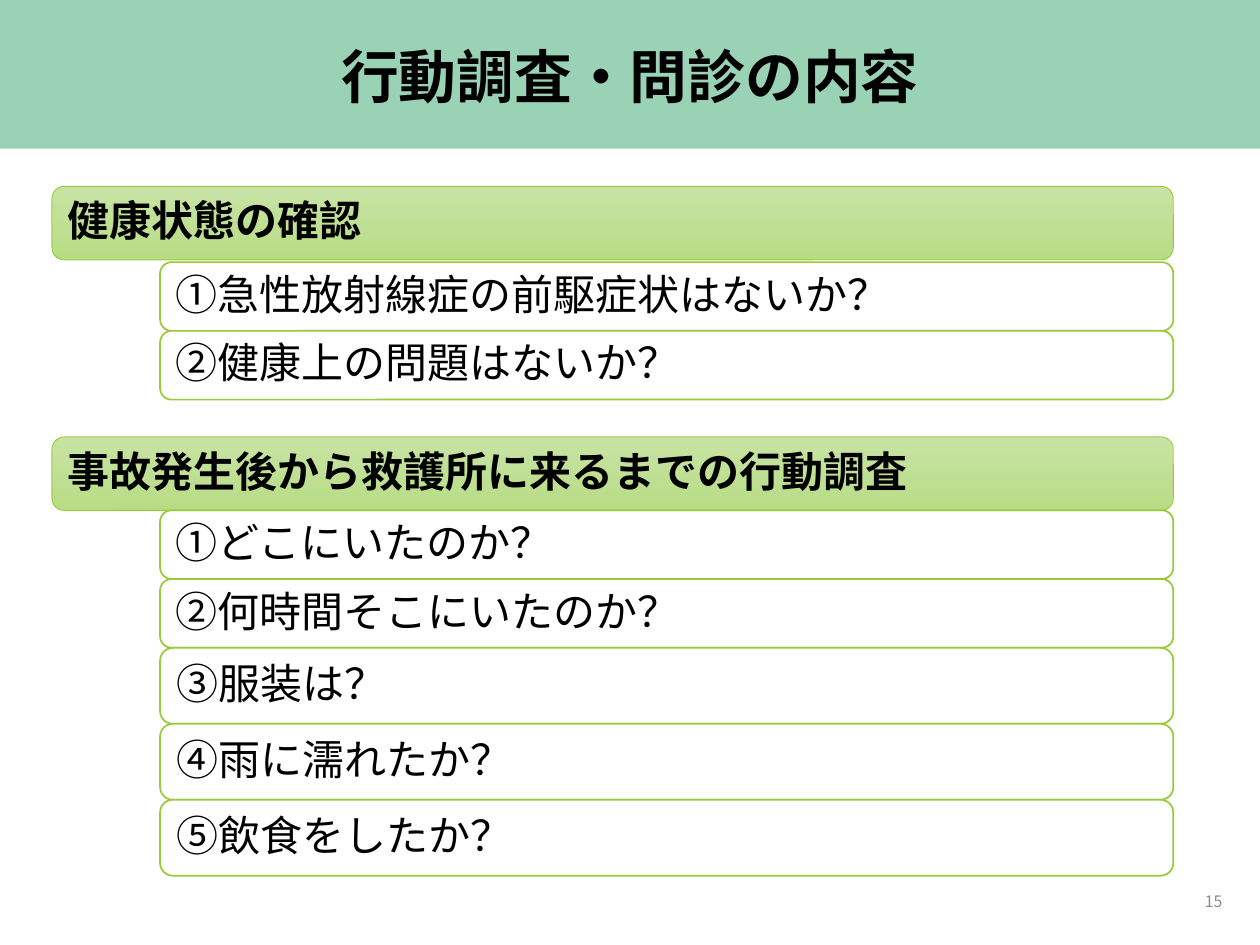
from dataclasses import dataclass

from lxml.etree import SubElement
from pptx import Presentation
from pptx.dml.color import RGBColor
from pptx.enum.shapes import MSO_SHAPE
from pptx.enum.text import MSO_ANCHOR, PP_ALIGN
from pptx.oxml.ns import qn
from pptx.slide import Slide
from pptx.util import Pt


def color(hex_string):
    return RGBColor.from_string(hex_string)


@dataclass
class SlideBuilder:
    slide: Slide
    font: str = "Noto Sans CJK JP"
    ink: str = "000000"
    muted: str = "8C8C8C"
    paper: str = "FFFFFF"
    band_fill: str = "37A76F"
    outline: str = "99CB38"
    gradient: tuple = ("C8E3A5", "B7DD84")
    text_size: float = 24

    def add_text(self, shape, text, size, bold=False, ink=None,
                 align=PP_ALIGN.LEFT, spacing=0.9):
        frame = shape.text_frame
        frame.word_wrap = True
        frame.vertical_anchor = MSO_ANCHOR.MIDDLE
        paragraph = frame.paragraphs[0]
        paragraph.alignment = align
        paragraph.line_spacing = spacing
        run = paragraph.add_run()
        run.text = text
        run.font.name = self.font
        run.font.size = Pt(size)
        run.font.bold = bold
        run.font.color.rgb = color(ink or self.ink)
        # East Asian glyphs need their own typeface entry
        east_asian = SubElement(run.font._element, qn("a:ea"))
        east_asian.set("typeface", self.font)

    def shape(self, kind, left, top, width, height):
        shape = self.slide.shapes.add_shape(
            kind, Pt(left), Pt(top), Pt(width), Pt(height))
        shape.shadow.inherit = False
        return shape

    def band(self, left, top, width, height):
        band = self.shape(MSO_SHAPE.RECTANGLE, left, top, width, height)
        band.fill.solid()
        band.fill.fore_color.rgb = color(self.band_fill)
        band.line.fill.background()
        fill_color = band._element.spPr.find(".//" + qn("a:srgbClr"))
        SubElement(fill_color, qn("a:alpha")).set("val", "50000")

    def text_box(self, text, left, top, width, height, size, **style):
        box = self.slide.shapes.add_textbox(
            Pt(left), Pt(top), Pt(width), Pt(height))
        self.add_text(box, text, size, **style)

    def rounded_box(self, left, top, width, height, line_width):
        box = self.shape(MSO_SHAPE.ROUNDED_RECTANGLE, left, top, width, height)
        box.line.color.rgb = color(self.outline)
        box.line.width = Pt(line_width)
        return box

    def heading(self, text, left, top, width, height):
        box = self.rounded_box(left, top, width, height, 0.5)
        box.fill.gradient()
        box.fill.gradient_angle = 270
        for stop, shade in zip(box.fill.gradient_stops, self.gradient):
            stop.color.rgb = color(shade)
        self.add_text(box, text, self.text_size, bold=True)

    def item(self, text, left, top, width, height):
        box = self.rounded_box(left, top, width, height, 1)
        box.fill.solid()
        box.fill.fore_color.rgb = color(self.paper)
        self.add_text(box, text, self.text_size)


LEFT, RIGHT, ITEM_LEFT = 29.7, 670.5, 91.5
HEADING_HEIGHT = 42
SHORT, TALL = 39.3, 43.4

# Heading, heading top, first item top, items with their heights
SECTIONS = [
    ("事故発生後から救護所に来るまでの行動調査", 249.7, 291.6, [
        ("①どこにいたのか？", SHORT),
        ("②何時間そこにいたのか？", SHORT),
        ("③服装は？", TALL),
        ("④雨に濡れたか？", TALL),
        ("⑤飲食をしたか？", TALL),
    ]),
    ("健康状態の確認", 106.5, 149.8, [
        ("①急性放射線症の前駆症状はないか？", SHORT),
        ("②健康上の問題はないか？", SHORT),
    ]),
]


def main():
    presentation = Presentation()
    presentation.slide_width = Pt(720)
    presentation.slide_height = Pt(540)
    blank_layout = presentation.slide_layouts[6]
    builder = SlideBuilder(presentation.slides.add_slide(blank_layout))

    # Title band
    builder.band(0, 0, 720, 85)
    builder.text_box("行動調査・問診の内容", 49.5, 15, 621, 61, 33,
                     bold=True, align=PP_ALIGN.CENTER)

    # Question sections
    for heading, heading_top, top, items in SECTIONS:
        builder.heading(heading, LEFT, heading_top,
                        RIGHT - LEFT, HEADING_HEIGHT)
        for text, height in items:
            builder.item(text, ITEM_LEFT, top, RIGHT - ITEM_LEFT, height)
            top += height

    # Slide number
    builder.text_box("15", 543.6, 500.5, 162, 28.8, 9, ink=builder.muted,
                     align=PP_ALIGN.RIGHT, spacing=1.0)

    presentation.save("out.pptx")


if __name__ == "__main__":
    main()
